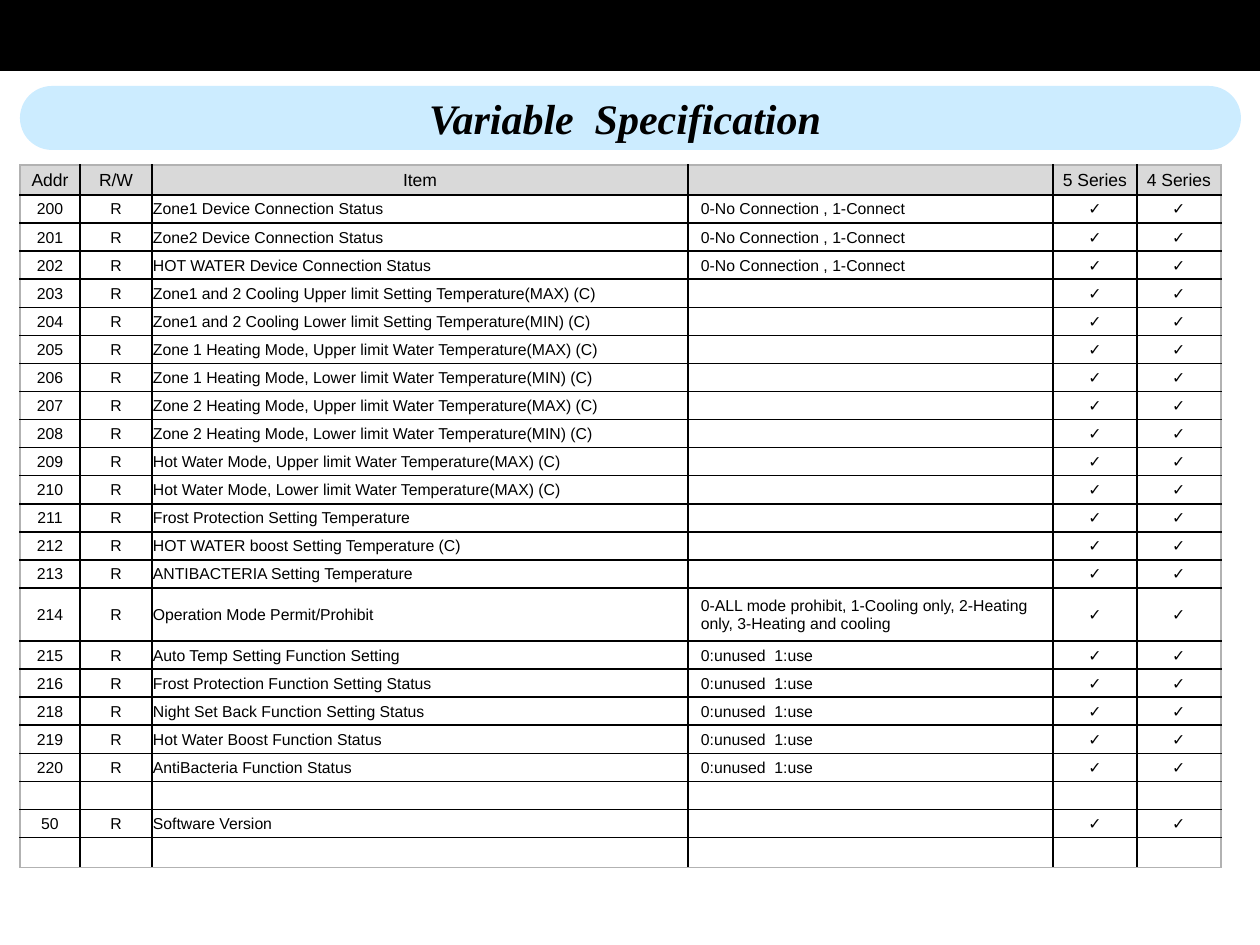
import pptx
import pptx.util
import pptx.dml.color
import pptx.enum.shapes
import pptx.enum.text
import pptx.oxml.ns
from lxml import etree

TITLE = "Variable  Specification "
HEAD = ("Addr", "R/W", "Item", "", "5 Series", "4 Series")
LINK = "0-No Connection , 1-Connect"
MODE = "0-ALL mode prohibit, 1-Cooling only, 2-Heating only, 3-Heating and cooling"
USE = "0:unused  1:use"
ITEMS = [
    ("200", "Zone1 Device Connection Status", LINK),
    ("201", "Zone2 Device Connection Status", LINK),
    ("202", "HOT WATER Device Connection Status", LINK),
    ("203", "Zone1 and 2 Cooling Upper limit Setting Temperature(MAX) (C)", ""),
    ("204", "Zone1 and 2 Cooling Lower limit Setting Temperature(MIN) (C)", ""),
    ("205", "Zone 1 Heating Mode, Upper limit Water Temperature(MAX) (C)", ""),
    ("206", "Zone 1 Heating Mode, Lower limit Water Temperature(MIN) (C)", ""),
    ("207", "Zone 2 Heating Mode, Upper limit Water Temperature(MAX) (C)", ""),
    ("208", "Zone 2 Heating Mode, Lower limit Water Temperature(MIN) (C)", ""),
    ("209", "Hot Water Mode, Upper limit Water Temperature(MAX) (C)", ""),
    ("210", "Hot Water Mode, Lower limit Water Temperature(MAX) (C)", ""),
    ("211", "Frost Protection Setting Temperature", ""),
    ("212", "HOT WATER boost Setting Temperature (C)", ""),
    ("213", "ANTIBACTERIA Setting Temperature", ""),
    ("214", "Operation Mode Permit/Prohibit", MODE),
    ("215", "Auto Temp Setting Function Setting", USE),
    ("216", "Frost Protection Function Setting Status", USE),
    ("218", "Night Set Back Function Setting Status", USE),
    ("219", "Hot Water Boost Function Status", USE),
    ("220", "AntiBacteria Function Status", USE),
    (),
    ("50", "Software Version", ""),
    (),
]
COLS = (60, 72, 536, 365, 84, 84)
EDGE, BODY, TALL = 30, 28.1, 53
THEME = {
    "ink": "000000", "pill": "CCECFF", "head": "D9D9D9", "rim": "B2B2B2",
    "page": "FFFFFF", "sans": "Arial", "serif": "Times New Roman",
    "title": 24, "label": 10, "text": 9,
}
ALIGN = pptx.enum.text.PP_ALIGN
MIDDLE = pptx.enum.text.MSO_ANCHOR.MIDDLE
KIND = pptx.enum.shapes.MSO_SHAPE


def px(n):
    return pptx.util.Emu(round(n * 914400 / 126))


def tint(name):
    return pptx.dml.color.RGBColor.from_string(THEME[name])


def write(para, text, face, size):
    run = para.add_run()
    run.text = text
    run.font.name = THEME[face]
    run.font.size = pptx.util.Pt(THEME[size])
    run.font.color.rgb = tint("ink")
    return run


def block(slide, kind, box, fill):
    shape = slide.shapes.add_shape(kind, *map(px, box))
    shape.shadow.inherit = False
    shape.fill.solid()
    shape.fill.fore_color.rgb = tint(fill)
    shape.line.fill.background()
    return shape


def border(cell, sides):
    props = cell._tc.get_or_add_tcPr()
    for spot, (side, name) in enumerate(sides.items()):
        line = etree.Element(pptx.oxml.ns.qn("a:ln" + side), w="12700")
        fill = etree.SubElement(line, pptx.oxml.ns.qn("a:solidFill"))
        etree.SubElement(fill, pptx.oxml.ns.qn("a:srgbClr"), val=THEME[name])
        props.insert(spot, line)


def dress(cell, text, top, col):
    size = "label" if top else "text"
    cell.fill.solid()
    cell.fill.fore_color.rgb = tint("head" if top else "page")
    cell.vertical_anchor = MIDDLE
    cell.margin_left = px(13 if col == 3 else 1)
    cell.margin_right = cell.margin_top = px(1)
    cell.margin_bottom = 0
    para = cell.text_frame.paragraphs[0]
    para.alignment = ALIGN.LEFT if col in (2, 3) and not top else ALIGN.CENTER
    if text:
        write(para, text, "sans", size)
    else:
        etree.SubElement(para._p, pptx.oxml.ns.qn("a:endParaRPr"),
                         sz=str(THEME[size] * 100))


def main():
    deck = pptx.Presentation()
    deck.slide_width, deck.slide_height = px(1260), px(945)
    slide = deck.slides.add_slide(deck.slide_layouts[6])

    block(slide, KIND.RECTANGLE, (0, 0, 1260, 71), "ink")
    pill = block(slide, KIND.ROUNDED_RECTANGLE, (20, 86, 1221, 64), "pill")
    pill.adjustments[0] = 0.5
    frame = pill.text_frame
    frame.word_wrap = False
    frame.vertical_anchor = MIDDLE
    para = frame.paragraphs[0]
    para.alignment = ALIGN.CENTER
    title = write(para, TITLE, "serif", "title")
    title.font.bold = title.font.italic = True

    rows = [HEAD] + [(i[0], "R", i[1], i[2], "✓", "✓") if i else ("",) * 6
                     for i in ITEMS]
    last = len(rows) - 1
    highs = [EDGE if r in (0, last) else TALL if row[3] == MODE else BODY
             for r, row in enumerate(rows)]
    grid = slide.shapes.add_table(len(rows), len(COLS), px(20), px(165),
                                  px(sum(COLS)), px(sum(highs))).table
    grid.first_row = grid.horz_banding = False
    for col, wide in zip(grid.columns, COLS):
        col.width = px(wide)
    for r, row in enumerate(rows):
        grid.rows[r].height = px(highs[r])
        for c, text in enumerate(row):
            cell = grid.cell(r, c)
            dress(cell, text, r == 0, c)
            rims = {"L": c == 0, "R": c == len(COLS) - 1,
                    "T": r == 0, "B": r == last}
            border(cell, {s: "rim" if out else "ink"
                          for s, out in rims.items()})

    deck.save("out.pptx")


if __name__ == "__main__":
    main()
